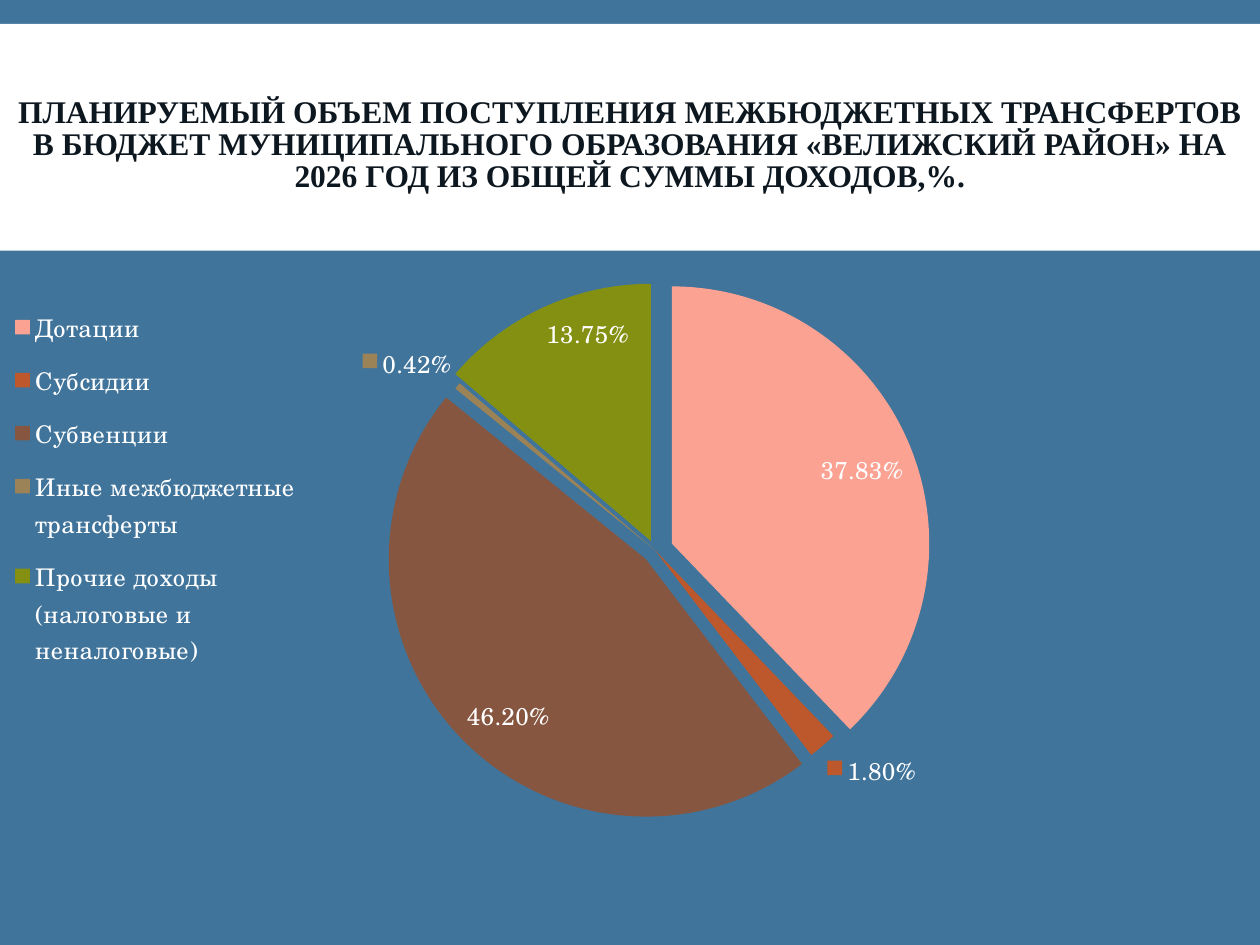
from lxml.etree import SubElement
from pptx import Presentation
from pptx.chart.data import CategoryChartData
from pptx.dml.color import RGBColor
from pptx.enum.chart import XL_CHART_TYPE as ChartType, XL_LABEL_POSITION as LabelPos, XL_LEGEND_POSITION as LegendPos
from pptx.enum.shapes import MSO_SHAPE as Shape
from pptx.enum.text import MSO_ANCHOR as Anchor, PP_ALIGN as Align
from pptx.oxml import parse_xml
from pptx.oxml.ns import nsdecls, qn
from pptx.util import Inches, Pt


def rgb(value):
    return RGBColor.from_string(value)


def write(frame, text, size, font, color, bold=False, align=Align.CENTER, spacing=1.0):
    frame.word_wrap = True
    frame.vertical_anchor = Anchor.MIDDLE
    paragraph = frame.paragraphs[0]
    paragraph.alignment = align
    paragraph.line_spacing = spacing
    run = paragraph.add_run()
    run.text = text
    run.font.size = Pt(size)
    run.font.name = font
    run.font.bold = bold
    run.font.color.rgb = rgb(color)


deck = Presentation()
deck.slide_width, deck.slide_height = Inches(10), Inches(7.5)
slide = deck.slides.add_slide(deck.slide_layouts[6])
slide.background.fill.solid()
slide.background.fill.fore_color.rgb = rgb("40749B")

band = slide.shapes.add_shape(Shape.RECTANGLE, 0, Inches(0.19), Inches(10), Inches(1.8))
band.shadow.inherit = False
band.fill.solid()
band.fill.fore_color.rgb = rgb("FFFFFF")
band.line.fill.background()

title = slide.shapes.add_textbox(0, Inches(0.58), Inches(10), Inches(1.16))
write(title.text_frame,
      "ПЛАНИРУЕМЫЙ ОБЪЕМ ПОСТУПЛЕНИЯ МЕЖБЮДЖЕТНЫХ ТРАНСФЕРТОВ "
      "В БЮДЖЕТ МУНИЦИПАЛЬНОГО ОБРАЗОВАНИЯ «ВЕЛИЖСКИЙ РАЙОН» НА "
      "2026 ГОД ИЗ ОБЩЕЙ СУММЫ ДОХОДОВ,%.",
      size=18, font="Times New Roman", color="0D171F", bold=True, spacing=0.85)

incomes = [
    ("Дотации", 0.3783, "FBA293", 7, False),
    ("Субсидии", 0.018, "BD582C", 0, True),
    ("Субвенции", 0.462, "865640", 5, False),
    ("Иные межбюджетные трансферты", 0.0042, "9B8357", 0, True),
    ("Прочие доходы (налоговые и неналоговые)", 0.1375, "849012", 4, False),
]
shares = CategoryChartData(number_format="0.00%")
shares.categories = [income[0] for income in incomes]
shares.add_series("Series 1", [income[1] for income in incomes])
pie = slide.shapes.add_chart(ChartType.PIE, 0, Inches(2), Inches(9.86), Inches(5.36), shares).chart
pie.has_title = False
pie.font.size = Pt(10)
pie.font.name = "Calibri"
pie.font.color.rgb = rgb("FFFFFF")
pie.has_legend = True
pie.legend.position = LegendPos.BOTTOM
pie.legend.include_in_layout = False

plot = pie.plots[0]
plot.vary_by_categories = True
series = plot.series[0]
labels = series.data_labels
labels.show_value = True
labels.number_format = "0.00%"
labels.number_format_is_linked = False
labels.position = LabelPos.INSIDE_END
fonts = [pie.legend.font, labels.font]

for index, (name, share, color, explosion, outside) in enumerate(incomes):
    point = series.points[index]
    point.format.fill.solid()
    point.format.fill.fore_color.rgb = rgb(color)
    point.format.line.fill.background()
    if explosion:
        wedge = series._element.xpath(f"c:dPt[c:idx/@val='{index}']/c:spPr")[0]
        wedge.addprevious(parse_xml(f'<c:explosion {nsdecls("c")} val="{explosion}"/>'))
    if outside:
        point.data_label.position = LabelPos.OUTSIDE_END
        fonts.append(point.data_label.font)
        series._element.xpath(f"c:dLbls/c:dLbl[c:idx/@val='{index}']/c:showLegendKey")[0].set("val", "1")

for font in fonts:
    font.size = Pt(13.9)
    font.name = "TeX Gyre Schola"
    font.color.rgb = rgb("FFFFFF")

plot_area = pie.element.xpath("c:chart/c:plotArea")[0]
legend = pie.element.xpath("c:chart/c:legend")[0]
for part, place, box in [
    (plot_area, 0, (0.32, 0.061, 0.415, 0.762)),
    (legend, 1, (0.01, 0.06, 0.23, 0.58)),
]:
    for old in part.findall(qn("c:layout")):
        part.remove(old)
    layout = parse_xml(f'<c:layout {nsdecls("c")}><c:manualLayout/></c:layout>')
    settings = [("xMode", "edge"), ("yMode", "edge"), *zip("xywh", box)]
    if part is plot_area:
        settings.insert(0, ("layoutTarget", "inner"))
    for tag, value in settings:
        SubElement(layout[0], qn(f"c:{tag}")).set("val", str(value))
    part.insert(place, layout)

deck.save("out.pptx")
